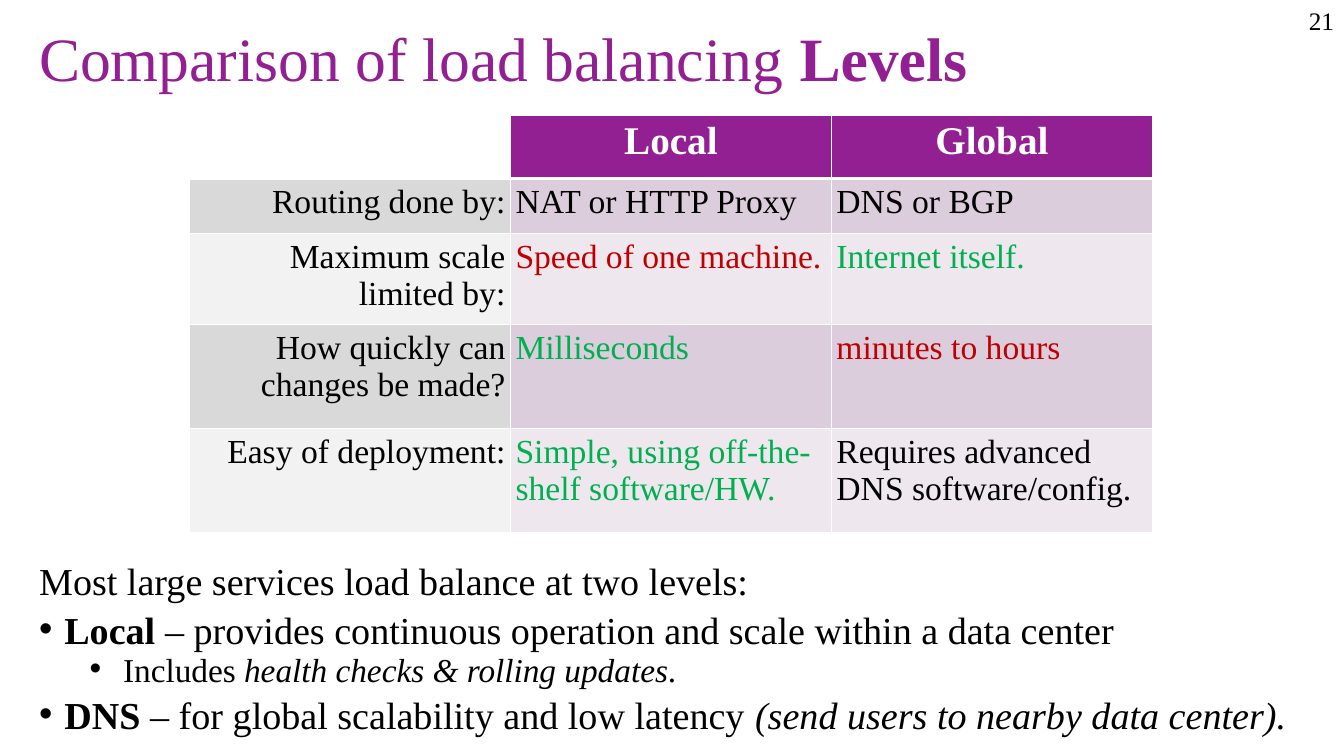
from lxml import etree
from pptx import Presentation
from pptx.dml.color import RGBColor
from pptx.enum.text import MSO_ANCHOR, PP_ALIGN
from pptx.oxml.ns import qn
from pptx.util import Inches, Pt

FONT = "Times New Roman"
PURPLE, WHITE, BLACK = "932092", "FFFFFF", "000000"
RED, GREEN = "C00000", "00B050"
GREYS = ["D9D9D9", "F2F2F2"]
TINTS = ["DCCDDC", "EEE8EE"]

# A run is (text, style), where style holds "b" for bold and "i" for italic.
TITLE = [("Comparison of load balancing ", ""), ("Levels", "b")]
NUMBER = [("21", "")]
HEADS = ["Local", "Global"]
ROWS = [
    ("Routing done by:", ("NAT or HTTP Proxy", BLACK), ("DNS or BGP", BLACK)),
    ("Maximum scale\nlimited by:", ("Speed of one machine.", RED),
     ("Internet itself.", GREEN)),
    ("How quickly can changes be made?", ("Milliseconds", GREEN),
     ("minutes to hours", RED)),
    ("Easy of deployment:", ("Simple, using off-the-shelf software/HW.", GREEN),
     ("Requires advanced DNS software/config.", BLACK)),
]
HEIGHTS = [0.63, 0.55, 0.79, 1.03, 1.03]
WIDTH = 9.55

# Each line: size, space before, indent of the text (0 for no bullet), runs.
BODY = [
    (27.2, 10, 0, [("Most large services load balance at two levels:", "")]),
    (27.2, 10, 0.25, [
        ("Local ", "b"),
        ("– provides continuous operation and scale within a data center", "")]),
    (23.8, 5, 0.75, [
        (" Includes", ""), (" health checks & rolling updates", "i"), (".", "")]),
    (27.2, 10, 0.25, [
        ("DNS", "b"), (" – for global scalability and low latency ", ""),
        ("(send users to nearby data center).", "i")]),
]


def color(code):
    return RGBColor.from_string(code)


def write(para, runs, size, code, align=PP_ALIGN.LEFT):
    para.alignment = align
    for words, style in runs:
        for i, line in enumerate(words.split("\n")):
            if i:
                para.add_line_break()
            run = para.add_run()
            run.text = line
            font = run.font
            font.name, font.size = FONT, Pt(size)
            font.bold, font.italic = "b" in style, "i" in style
            font.color.rgb = color(code)


def add_box(slide, left, top, width, height):
    box = slide.shapes.add_textbox(
        Inches(left), Inches(top), Inches(width), Inches(height))
    box.text_frame.word_wrap = True
    return box.text_frame


def set_bullet(para, indent):
    props = para._p.get_or_add_pPr()
    props.set("marL", str(Inches(indent)))
    props.set("indent", str(Inches(-0.25)))
    etree.SubElement(props, qn("a:buFont"), typeface="Arial")
    etree.SubElement(props, qn("a:buChar"), char="•")


def set_edges(cell, low):
    """Draw white cell borders; low is the width of the bottom one."""
    props = cell._tc.get_or_add_tcPr()
    for side, width in zip("LRTB", (1, 1, 1, low)):
        line = etree.SubElement(props, qn("a:ln" + side), w=str(Pt(width)))
        fill = etree.SubElement(line, qn("a:solidFill"))
        etree.SubElement(fill, qn("a:srgbClr"), val=WHITE)


def fill_cell(cell, words, size, code, back, align, style=""):
    cell.margin_left = cell.margin_right = Inches(0.05)
    cell.margin_top = cell.margin_bottom = Inches(0.05)
    cell.fill.solid()
    cell.fill.fore_color.rgb = color(back)
    write(cell.text_frame.paragraphs[0], [(words, style)], size, code, align)


def add_grid(slide):
    table = slide.shapes.add_table(
        len(HEIGHTS), 3, Inches(1.88), Inches(1.14),
        Inches(WIDTH), Inches(sum(HEIGHTS))).table
    table.first_row = table.horz_banding = False
    for col in table.columns:
        col.width = Inches(WIDTH / 3)
    for r, height in enumerate(HEIGHTS):
        table.rows[r].height = Inches(height)
        for c in range(3):
            set_edges(table.cell(r, c), 1 if r else 3)

    table.cell(0, 0).fill.background()
    for c, head in enumerate(HEADS, 1):
        fill_cell(table.cell(0, c), head, 28, WHITE, PURPLE,
                  PP_ALIGN.CENTER, "b")
    for r, (label, *facts) in enumerate(ROWS, 1):
        band = (r - 1) % 2
        fill_cell(table.cell(r, 0), label, 24, BLACK, GREYS[band],
                  PP_ALIGN.RIGHT)
        for c, (words, code) in enumerate(facts, 1):
            fill_cell(table.cell(r, c), words, 24, code, TINTS[band],
                      PP_ALIGN.LEFT)


def main():
    deck = Presentation()
    deck.slide_width, deck.slide_height = Inches(13.33), Inches(7.5)
    slide = deck.slides.add_slide(deck.slide_layouts[6])

    title = add_box(slide, 0.29, 0.17, 12.73, 0.88)
    title.vertical_anchor = MSO_ANCHOR.MIDDLE
    title.paragraphs[0].line_spacing = 0.9
    write(title.paragraphs[0], TITLE, 44, PURPLE)

    add_grid(slide)

    body = add_box(slide, 0.29, 5.59, 12.73, 1.75)
    for i, (size, gap, indent, runs) in enumerate(BODY):
        para = body.add_paragraph() if i else body.paragraphs[0]
        para.line_spacing, para.space_before = 0.75, Pt(gap)
        if indent:
            set_bullet(para, indent)
        write(para, runs, size, BLACK)

    number = add_box(slide, 12.68, 0, 0.65, 0.4)
    write(number.paragraphs[0], NUMBER, 18, BLACK, PP_ALIGN.RIGHT)
    deck.save("out.pptx")


if __name__ == "__main__":
    main()
